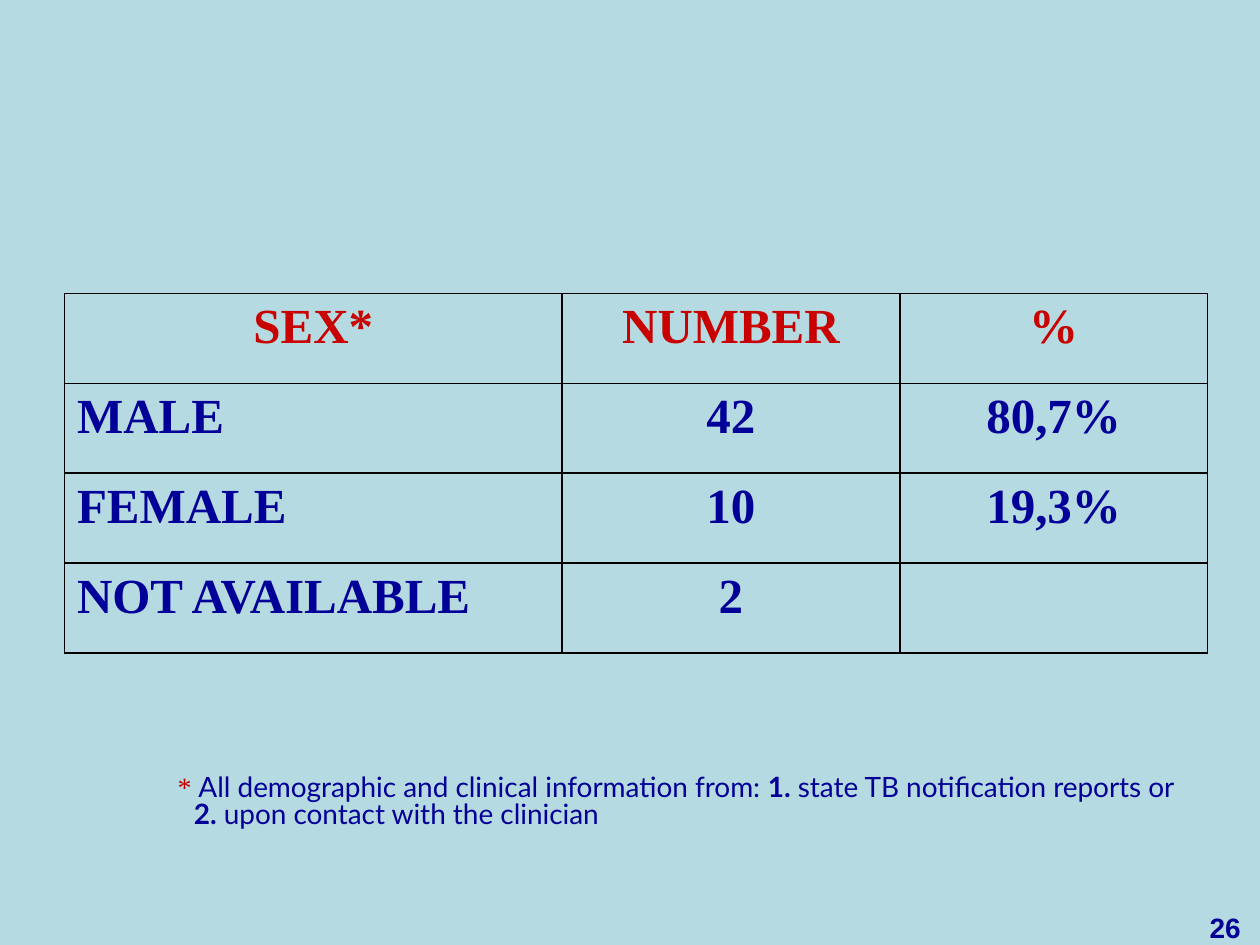
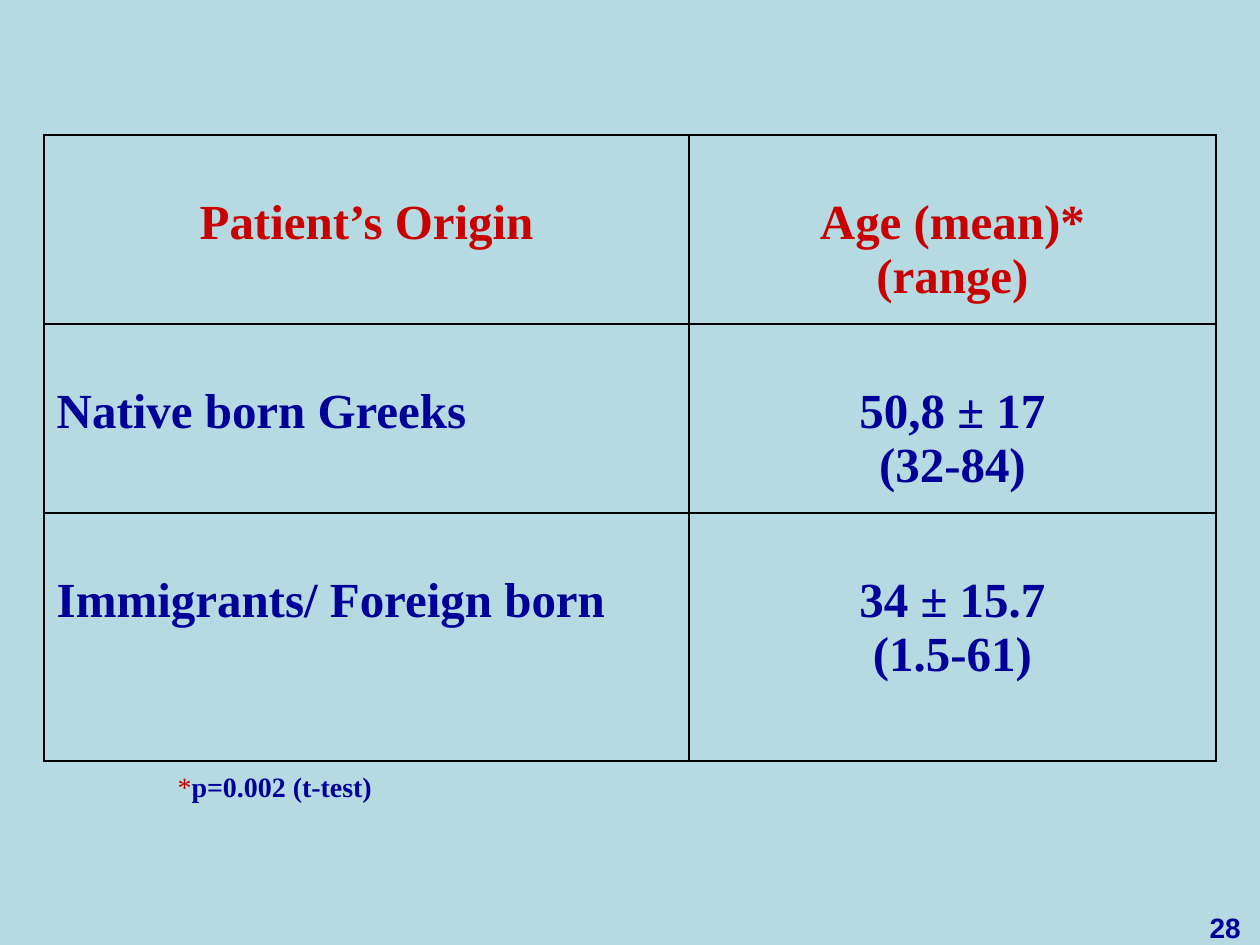
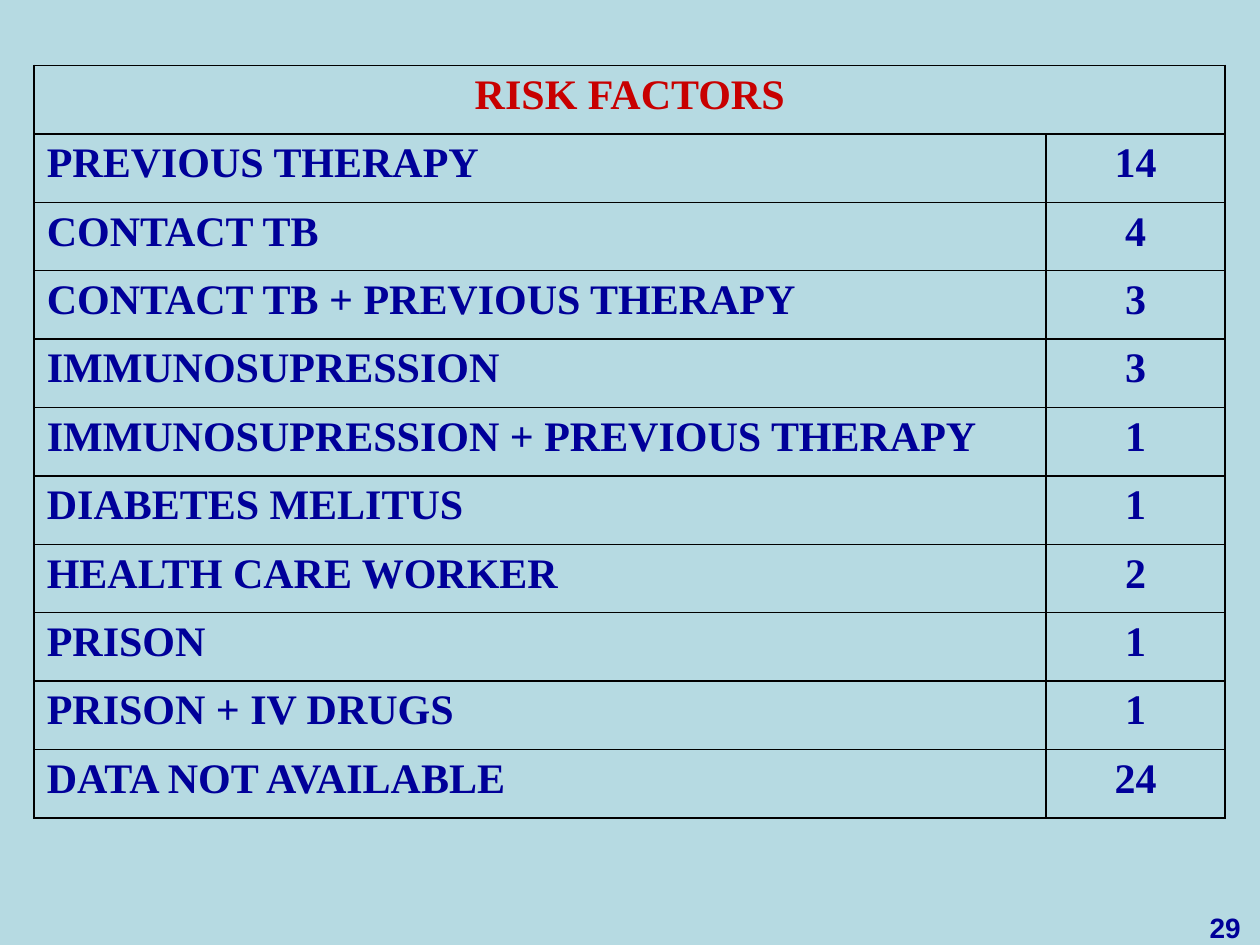
from lxml import etree
from pptx import Presentation
from pptx import util as u
from pptx.dml.color import RGBColor
from pptx.enum import text
from pptx.oxml import ns

SKY = RGBColor(0xB6, 0xDA, 0xE2)
RED = RGBColor(0xC8, 0x00, 0x00)
NAVY = RGBColor(0x00, 0x00, 0x99)
SERIF, SANS, NOTE = "Times New Roman", "Arial", "Lato"

SLIDES = [
    dict(
        number="26", left=1.3, top=5.92, size=28, margin_top=0.13,
        cols=[10.03, 6.81, 6.2], heights=[1.81] * 4,
        rows=[
            ["SEX*", "NUMBER", "%"],
            ["MALE", "42", "80,7%"],
            ["FEMALE", "10", "19,3%"],
            ["NOT AVAILABLE", "2", ""],
        ],
        note=[
            ("* ", SERIF, RED, False),
            ("All demographic and clinical information from: ", NOTE, NAVY, False),
            ("1.", NOTE, NAVY, True),
            (" state TB notification reports or ", NOTE, NAVY, False),
            ("2.", NOTE, NAVY, True),
            (" upon contact with the clinician", NOTE, NAVY, False),
        ],
    ),
    dict(
        number="28", left=0.89, top=2.72, size=28, margin_top=1.22,
        cols=[13, 10.62], heights=[3.81, 3.81, 5],
        rows=[
            ["Patient’s Origin", "Age (mean)*\n(range)"],
            ["Native born Greeks", "50,8 ± 17\n(32-84)"],
            ["Immigrants/ Foreign born", "34 ± 15.7\n(1.5-61)"],
        ],
        note=[
            ("*", SERIF, RED, False),
            ("p=0.002 (t-test)", SERIF, NAVY, True),
        ],
    ),
    dict(
        number="29", left=0.69, top=1.32, size=24, margin_top=0.13,
        cols=[20.4, 3.61], heights=[1.38] * 11,
        rows=[
            ["RISK FACTORS", ""],
            ["PREVIOUS THERAPY", "14"],
            ["CONTACT TB", "4"],
            ["CONTACT TB + PREVIOUS THERAPY", "3"],
            ["IMMUNOSUPRESSION", "3"],
            ["IMMUNOSUPRESSION + PREVIOUS THERAPY", "1"],
            ["DIABETES MELITUS", "1"],
            ["HEALTH CARE WORKER", "2"],
            ["PRISON", "1"],
            ["PRISON + IV DRUGS", "1"],
            ["DATA NOT AVAILABLE", "24"],
        ],
        note=[],
    ),
]


def set_font(font, name, size, color, bold):
    font.name, font.size, font.bold = name, u.Pt(size), bold
    font.color.rgb = color


def add_borders(cell):
    tcPr = cell._tc.get_or_add_tcPr()
    for i, side in enumerate(("lnL", "lnR", "lnT", "lnB")):
        ln = etree.Element(ns.qn(f"a:{side}"), w=str(u.Pt(1)))
        fill = etree.SubElement(ln, ns.qn("a:solidFill"))
        etree.SubElement(fill, ns.qn("a:srgbClr"), val="000000")
        tcPr.insert(i, ln)


prs = Presentation()
prs.slide_width, prs.slide_height = u.Cm(25.4), u.Cm(19.05)
bg = prs.slide_master.background.fill
bg.solid()
bg.fore_color.rgb = SKY

for data in SLIDES:
    s = prs.slides.add_slide(prs.slide_layouts[6])

    rows, cols, heights = data["rows"], data["cols"], data["heights"]
    table = s.shapes.add_table(
        len(rows), len(cols), u.Cm(data["left"]), u.Cm(data["top"]),
        u.Cm(sum(cols)), u.Cm(sum(heights))).table
    for column, width in zip(table.columns, cols):
        column.width = u.Cm(width)
    for row, height in zip(table.rows, heights):
        row.height = u.Cm(height)
    for i, labels in enumerate(rows):
        for j, label in enumerate(labels):
            cell = table.cell(i, j)
            cell.fill.background()
            add_borders(cell)
            cell.margin_top = u.Cm(data["margin_top"])
            cell.text = label
            for p in cell.text_frame.paragraphs:
                centred = i == 0 or j > 0
                p.alignment = text.PP_ALIGN.CENTER if centred else text.PP_ALIGN.LEFT
                set_font(p.font, SERIF, data["size"], NAVY if i else RED, True)
    if not rows[0][-1]:
        table.cell(0, 0).merge(table.cell(0, len(cols) - 1))

    if data["note"]:
        tf = s.shapes.add_textbox(u.Cm(2.69), u.Cm(15.52), u.Cm(21.41), u.Cm(1.4)).text_frame
        tf.word_wrap = True
        p = tf.paragraphs[0]
        p.line_spacing, p.space_before = 0.8, u.Pt(3.2)
        pPr = p._p.get_or_add_pPr()
        pPr.set("marL", str(u.Cm(0.97)))
        pPr.set("indent", str(u.Cm(-0.33)))
        for words, name, color, bold in data["note"]:
            r = p.add_run()
            r.text = words
            set_font(r.font, name, 16, color, bold)

    tf = s.shapes.add_textbox(u.Cm(24), u.Cm(18.24), u.Cm(1.4), u.Cm(0.81)).text_frame
    tf.word_wrap = True
    p = tf.paragraphs[0]
    p.text = data["number"]
    p.alignment = text.PP_ALIGN.CENTER
    set_font(p.font, SANS, 16, NAVY, True)

prs.save("out.pptx")
